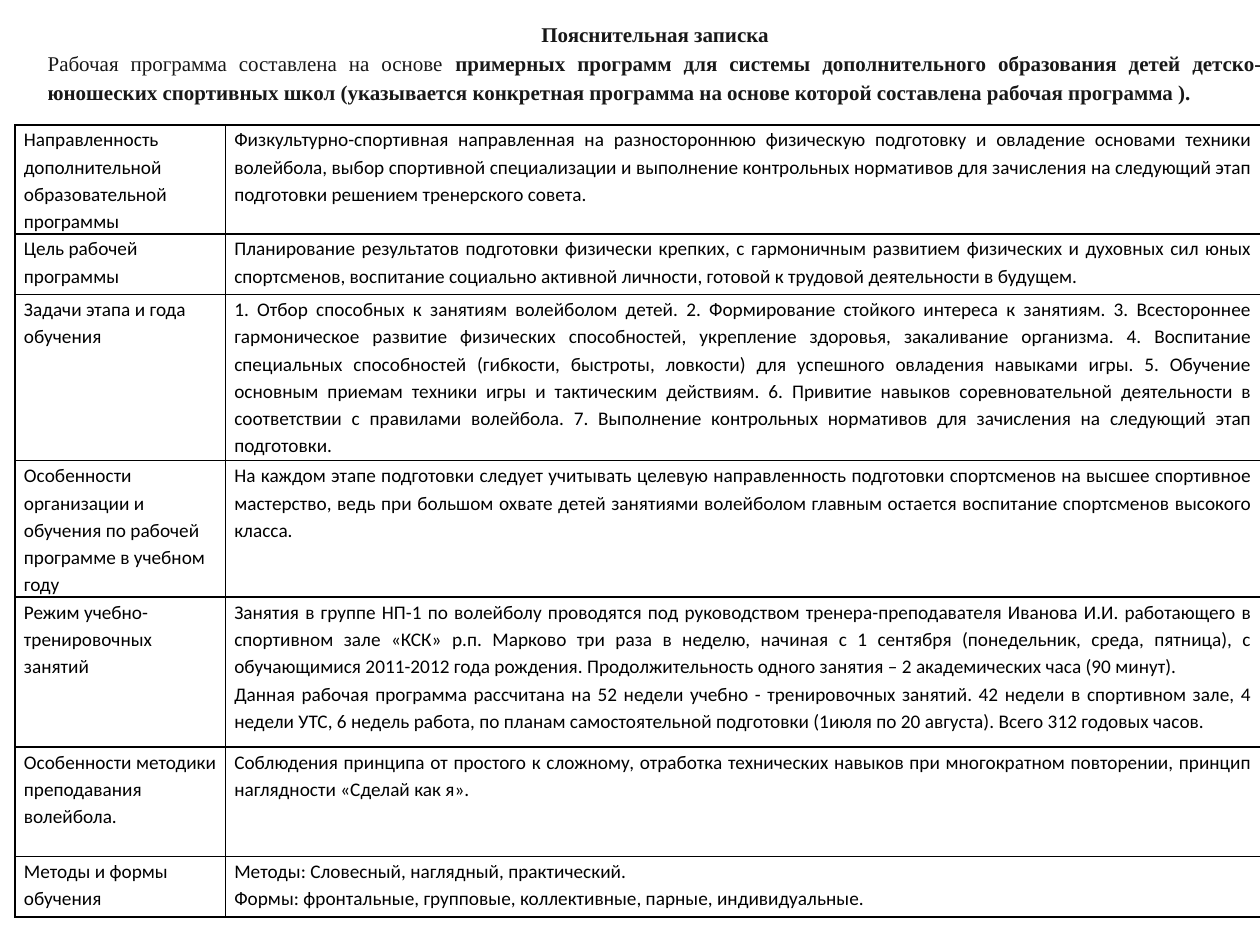
"""Builds the explanatory note slide of a volleyball training programme."""
from lxml import etree
from pptx import Presentation
from pptx.dml.color import RGBColor
from pptx.enum.text import PP_ALIGN
from pptx.oxml.ns import qn
from pptx.util import Inches, Pt

LEFT, CENTER, JUSTIFY = PP_ALIGN.LEFT, PP_ALIGN.CENTER, PP_ALIGN.JUSTIFY
COLORS = {"heading": "181818", "text": "000000", "border": "000000"}
HEADING_FONT = ("Times New Roman", 12, COLORS["heading"])
TABLE_FONT = ("Calibri", 11, COLORS["text"])

HEADING = [
    (CENTER, [("Пояснительная записка", True)]),
    (JUSTIFY, [
        ("Рабочая программа составлена на основе ", False),
        ("примерных программ для системы дополнительного образования детей "
         "детско-юношеских спортивных школ (указывается конкретная программа "
         "на основе которой составлена рабочая программа ).", True),
    ]),
]

COLUMN_WIDTHS = (1.67, 8.22)
ROWS = [
    (0.84, "Направленность дополнительной образовательной программы", [
        "Физкультурно-спортивная направленная на разностороннюю физическую подготовку "
        "и овладение основами техники волейбола, выбор спортивной специализации и "
        "выполнение контрольных нормативов для зачисления на следующий этап подготовки "
        "решением тренерского совета."]),
    (0.48, "Цель рабочей программы", [
        "Планирование результатов подготовки физически крепких, с гармоничным развитием "
        "физических и духовных сил юных спортсменов, воспитание социально активной "
        "личности, готовой к трудовой деятельности в будущем."]),
    (1.32, "Задачи этапа и года обучения", [
        "1. Отбор способных к занятиям волейболом детей. 2. Формирование стойкого "
        "интереса к занятиям. 3. Всестороннее гармоническое развитие физических "
        "способностей, укрепление здоровья, закаливание организма. 4. Воспитание "
        "специальных способностей (гибкости, быстроты, ловкости) для успешного овладения "
        "навыками игры. 5. Обучение основным приемам техники игры и тактическим "
        "действиям. 6. Привитие навыков соревновательной деятельности в соответствии с "
        "правилами волейбола. 7. Выполнение контрольных нормативов для зачисления на "
        "следующий этап подготовки."]),
    (1.05, "Особенности организации и обучения по рабочей программе в учебном году", [
        "На каждом этапе подготовки следует учитывать целевую направленность подготовки "
        "спортсменов на высшее спортивное мастерство, ведь при большом охвате детей "
        "занятиями волейболом главным остается воспитание спортсменов высокого класса."]),
    (1.19, "Режим учебно-тренировочных занятий", [
        "Занятия в группе НП-1 по волейболу проводятся под руководством "
        "тренера-преподавателя Иванова И.И. работающего в спортивном зале «КСК» "
        "р.п. Марково три раза в неделю, начиная с 1 сентября (понедельник, среда, "
        "пятница), c обучающимися 2011-2012 года рождения. Продолжительность одного "
        "занятия – 2 академических часа (90 минут).",
        "Данная рабочая программа рассчитана на 52 недели учебно - тренировочных "
        "занятий. 42 недели в спортивном зале, 4 недели УТС, 6 недель работа, по планам "
        "самостоятельной подготовки (1июля по 20 августа). Всего 312 годовых часов."]),
    (0.87, "Особенности методики преподавания волейбола.", [
        "Соблюдения принципа от простого к сложному, отработка технических навыков при "
        "многократном повторении, принцип наглядности «Сделай как я»."]),
    (0.48, "Методы и формы обучения", [
        "Методы: Словесный, наглядный, практический.",
        "Формы: фронтальные, групповые, коллективные, парные, индивидуальные."]),
]


def write_paragraphs(frame, paragraphs, font):
    name, size, color = font
    for index, (alignment, spans) in enumerate(paragraphs):
        para = frame.add_paragraph() if index else frame.paragraphs[0]
        para.alignment = alignment
        para.line_spacing = 1.15
        for text, bold in spans:
            span = para.add_run()
            span.text = text
            span.font.name = name
            span.font.size = Pt(size)
            span.font.bold = bold
            span.font.color.rgb = RGBColor.from_string(color)


def add_borders(cell):
    properties = cell._tc.get_or_add_tcPr()
    for position, side in enumerate(("a:lnL", "a:lnR", "a:lnT", "a:lnB")):
        line = etree.Element(qn(side), w=str(Pt(1)))
        fill = etree.SubElement(line, qn("a:solidFill"))
        etree.SubElement(fill, qn("a:srgbClr"), val=COLORS["border"])
        properties.insert(position, line)


def fill_cell(cell, paragraphs):
    cell.margin_left = cell.margin_right = Inches(0.07)
    cell.margin_top = cell.margin_bottom = 0
    cell.fill.background()
    add_borders(cell)
    write_paragraphs(cell.text_frame, paragraphs, TABLE_FONT)


def add_programme_table(page):
    height = sum(row[0] for row in ROWS)
    table = page.shapes.add_table(
        len(ROWS), len(COLUMN_WIDTHS), Inches(0.12), Inches(0.99),
        Inches(sum(COLUMN_WIDTHS)), Inches(height)).table
    table.first_row = table.horz_banding = False
    for column, width in zip(table.columns, COLUMN_WIDTHS):
        column.width = Inches(width)
    for index, (row_height, topic, details) in enumerate(ROWS):
        table.rows[index].height = Inches(row_height)
        fill_cell(table.cell(index, 0), [(LEFT, [(topic, False)])])
        fill_cell(table.cell(index, 1),
                  [(JUSTIFY, [(detail, False)]) for detail in details])


def add_heading(page):
    box = page.shapes.add_textbox(Inches(0.28), Inches(0.09), Inches(9.84), Inches(0.8))
    box.text_frame.word_wrap = True
    write_paragraphs(box.text_frame, HEADING, HEADING_FONT)


def main():
    deck = Presentation()
    deck.slide_width, deck.slide_height = Inches(10), Inches(7.5)
    page = deck.slides.add_slide(deck.slide_layouts[6])
    add_programme_table(page)
    add_heading(page)
    deck.save("out.pptx")


if __name__ == "__main__":
    main()
